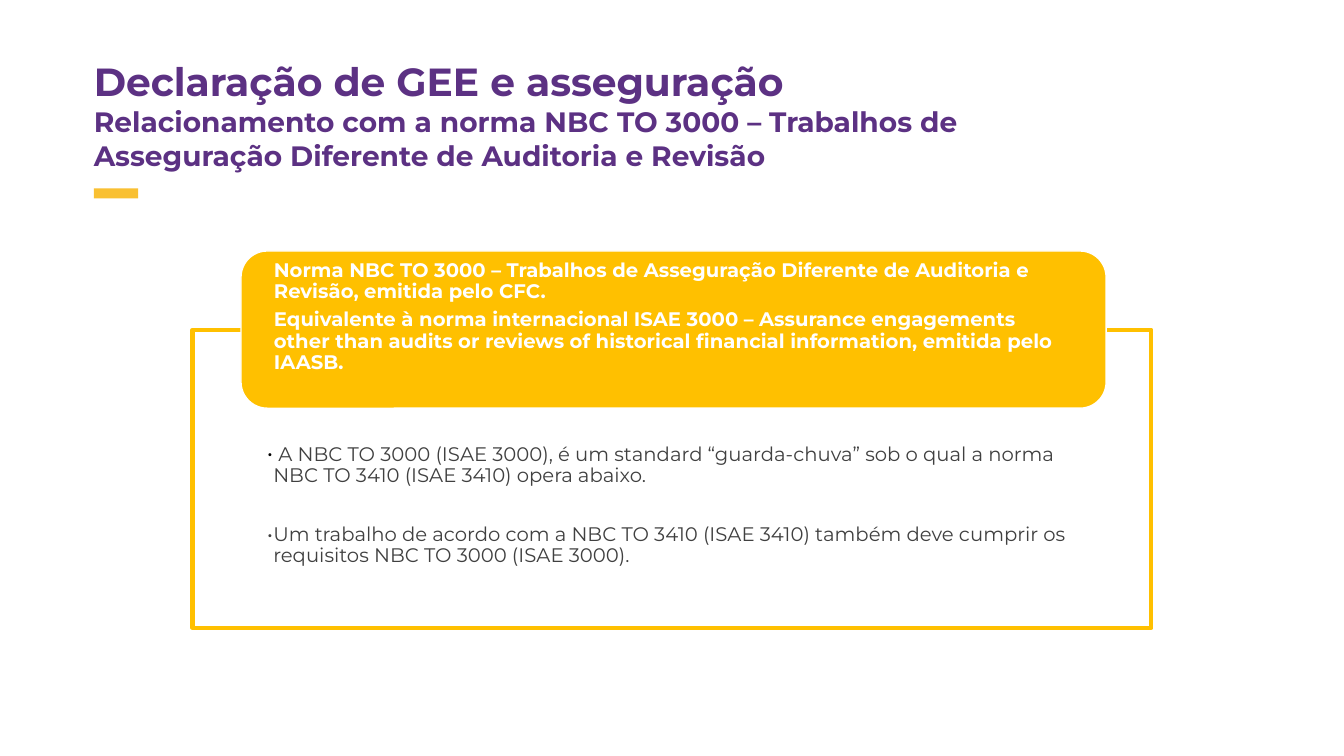
import dataclasses

import lxml.etree
import pptx
import pptx.dml.color
import pptx.enum.shapes
import pptx.enum.text
import pptx.oxml.ns
import pptx.util


@dataclasses.dataclass(frozen=True)
class Theme:
    font: str = "Montserrat"
    purple: str = "5C3183"
    accent: str = "F9C032"
    amber: str = "FFC000"
    white: str = "FFFFFF"
    black: str = "000000"
    grey: str = "404040"
    title_size: int = 28
    subtitle_size: int = 20
    text_size: int = 14


THEME = Theme()
SLIDE_WIDTH = pptx.util.Inches(13.33)
SLIDE_HEIGHT = pptx.util.Inches(7.5)
CONTENT_WIDTH = 71.34


def rgb(color):
    return pptx.dml.color.RGBColor.from_string(color)


def box(left, top, width, height):
    """Turn percentages of the slide into lengths."""
    return (int(SLIDE_WIDTH * left / 100), int(SLIDE_HEIGHT * top / 100),
            int(SLIDE_WIDTH * width / 100), int(SLIDE_HEIGHT * height / 100))


def place(shape, bounds):
    shape.left, shape.top, shape.width, shape.height = bounds


def paint(shape, fill, line=None, line_width=1):
    shape.fill.solid()
    shape.fill.fore_color.rgb = rgb(fill)
    if line is None:
        shape.line.fill.background()
    else:
        shape.line.color.rgb = rgb(line)
        shape.line.width = pptx.util.Pt(line_width)


def add_panel(slide, kind, bounds, fill, line=None):
    panel = slide.shapes.add_shape(kind, *bounds)
    panel.shadow.inherit = False
    paint(panel, fill, line)
    return panel


def set_frame(shape, side, top, bottom):
    """Anchor the text at the top with the given margins in inches."""
    frame = shape.text_frame
    frame.word_wrap = True
    frame.auto_size = pptx.enum.text.MSO_AUTO_SIZE.NONE
    frame.vertical_anchor = pptx.enum.text.MSO_ANCHOR.TOP
    frame.margin_left = frame.margin_right = pptx.util.Inches(side)
    frame.margin_top = pptx.util.Inches(top)
    frame.margin_bottom = pptx.util.Inches(bottom)
    return frame


def style_runs(paragraph, size, color, bold=False):
    for run in paragraph.runs:
        run.font.name = THEME.font
        run.font.size = pptx.util.Pt(size)
        run.font.color.rgb = rgb(color)
        run.font.bold = bold


def add_bullet(paragraph, color, indent=0.06):
    properties = paragraph._p.get_or_add_pPr()
    hanging = pptx.util.Inches(indent)
    properties.set("marL", str(hanging))
    properties.set("indent", str(-hanging))
    qn = pptx.oxml.ns.qn
    bullet_color = lxml.etree.SubElement(properties, qn("a:buClr"))
    lxml.etree.SubElement(bullet_color, qn("a:srgbClr")).set("val", color)
    lxml.etree.SubElement(properties, qn("a:buFont")).set("typeface", THEME.font)
    lxml.etree.SubElement(properties, qn("a:buChar")).set("char", "•")


def write_paragraphs(frame, texts, color, gap, bold=False, bullet_colors=()):
    frame.text = "\n".join(texts)
    for index, paragraph in enumerate(frame.paragraphs):
        if bullet_colors:
            add_bullet(paragraph, bullet_colors[index])
        paragraph.alignment = pptx.enum.text.PP_ALIGN.LEFT
        paragraph.line_spacing = 0.9
        paragraph.space_before = pptx.util.Pt(gap if index else 0)
        paragraph.space_after = pptx.util.Pt(0)
        style_runs(paragraph, THEME.text_size, color, bold)


def write_title(title, heading, subtitle):
    place(title, box(6.23, 6.93, CONTENT_WIDTH, 13.07))
    frame = set_frame(title, 0.1, 0.05, 0.05)
    frame.text = heading + "\v" + subtitle
    paragraph = frame.paragraphs[0]
    paragraph.alignment = pptx.enum.text.PP_ALIGN.LEFT
    style_runs(paragraph, THEME.subtitle_size, THEME.purple, bold=True)
    paragraph.runs[0].font.size = pptx.util.Pt(THEME.title_size)


def write_body(body, texts):
    place(body, box(14.33, 43.6, CONTENT_WIDTH, 39.47))
    paint(body, THEME.white, THEME.amber, 3)
    frame = set_frame(body, 0.74, 1.14, 0.11)
    write_paragraphs(frame, texts, THEME.grey, gap=27,
                     bullet_colors=(THEME.black, THEME.grey))


def add_standard_header(slide, texts):
    header = add_panel(slide, pptx.enum.shapes.MSO_SHAPE.ROUNDED_RECTANGLE,
                       box(17.93, 33.2, 64.37, 20.8), THEME.amber, THEME.white)
    frame = set_frame(header, 0.25, 0.02, 0)
    write_paragraphs(frame, texts, THEME.white, gap=5, bold=True)


def main():
    presentation = pptx.Presentation()
    presentation.slide_width = SLIDE_WIDTH
    presentation.slide_height = SLIDE_HEIGHT
    slide = presentation.slides.add_slide(presentation.slide_layouts[1])

    write_title(
        slide.shapes.title,
        "Declaração de GEE e asseguração",
        "Relacionamento com a norma NBC TO 3000 – Trabalhos de "
        "Asseguração Diferente de Auditoria e Revisão")
    add_panel(slide, pptx.enum.shapes.MSO_SHAPE.RECTANGLE,
              box(6.98, 24.93, 3.3, 1.33), THEME.accent)
    write_body(slide.placeholders[1], (
        " A NBC TO 3000 (ISAE 3000), é um standard “guarda-chuva” sob o qual "
        "a norma NBC TO 3410 (ISAE 3410) opera abaixo.",
        "Um trabalho de acordo com a NBC TO 3410 (ISAE 3410) também deve "
        "cumprir os requisitos NBC TO 3000 (ISAE 3000)."))
    add_standard_header(slide, (
        "Norma NBC TO 3000 – Trabalhos de Asseguração Diferente de Auditoria "
        "e Revisão, emitida pelo CFC.",
        "Equivalente à norma internacional ISAE 3000 – Assurance engagements "
        "other than audits or reviews of historical financial information, "
        "emitida pelo IAASB."))

    presentation.save("out.pptx")


if __name__ == "__main__":
    main()
